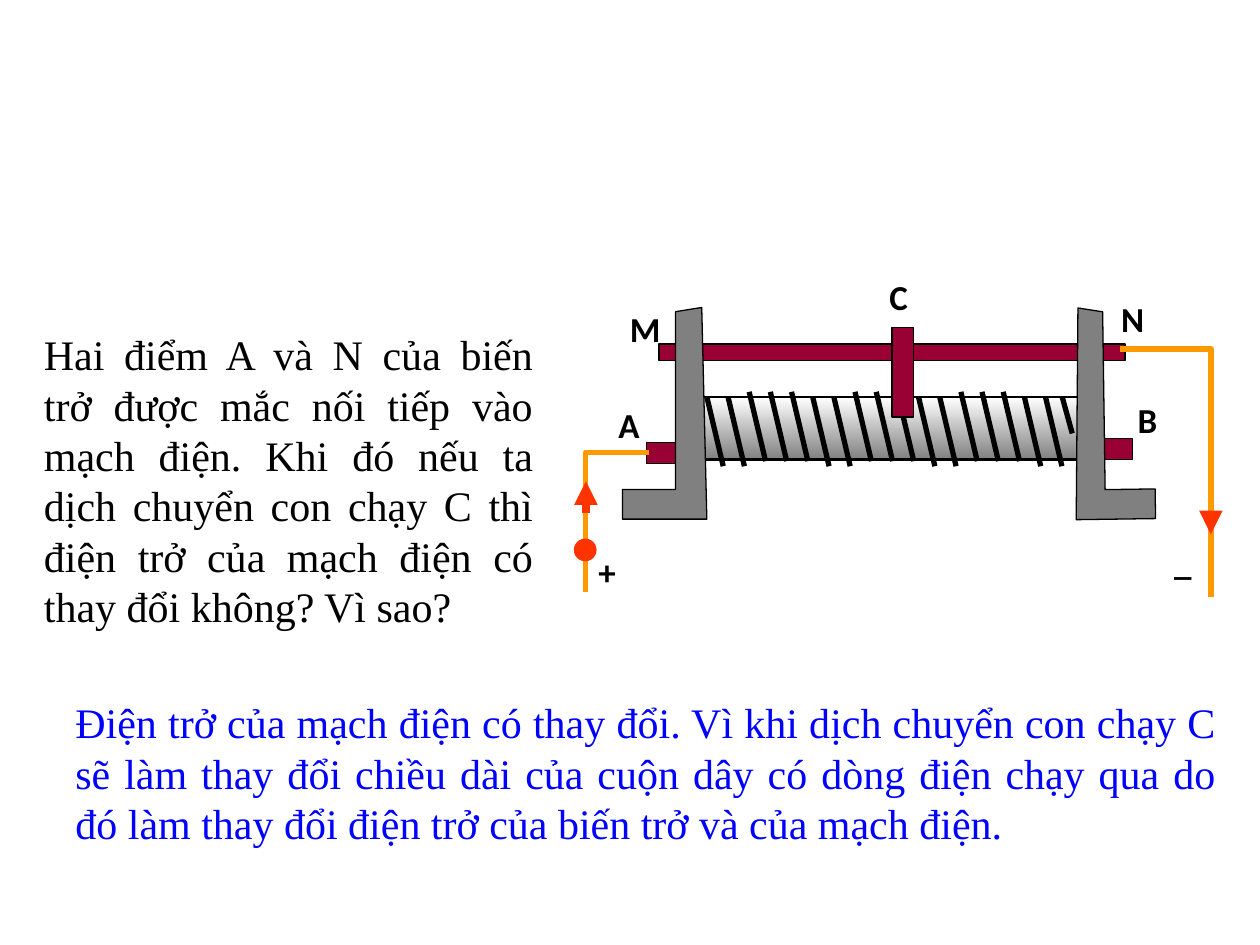
from lxml import etree
from pptx import Presentation
from pptx.dml.color import RGBColor
from pptx.enum.shapes import MSO_CONNECTOR, MSO_SHAPE
from pptx.enum.text import MSO_AUTO_SIZE, PP_ALIGN
from pptx.oxml.ns import qn
from pptx.util import Inches, Pt

RECTANGLE, OVAL = MSO_SHAPE.RECTANGLE, MSO_SHAPE.OVAL
STRAIGHT = MSO_CONNECTOR.STRAIGHT
FIT_SHAPE = MSO_AUTO_SIZE.SHAPE_TO_FIT_TEXT
JUSTIFY, LEFT = PP_ALIGN.JUSTIFY, PP_ALIGN.LEFT

BLACK = RGBColor(0x00, 0x00, 0x00)
WHITE = RGBColor(0xFF, 0xFF, 0xFF)
BLUE = RGBColor(0x00, 0x00, 0xFF)
GRAY = RGBColor(0x80, 0x80, 0x80)
CRIMSON = RGBColor(0x99, 0x00, 0x33)
ORANGE = RGBColor(0xFF, 0x99, 0x00)
RED = RGBColor(0xFF, 0x33, 0x00)

# The slide is a grid of 10 columns and 7.5 rows of square cells.
COLUMNS, ROWS = 10, 7.5
CELL = Inches(1)

QUESTION = (
    "Hai điểm A và N của biến trở được mắc nối tiếp vào mạch điện. "
    "Khi đó nếu ta dịch chuyển con chạy C thì điện trở của mạch điện "
    "có thay đổi không? Vì sao?"
)
ANSWER = (
    "Điện trở của mạch điện có thay đổi. Vì khi dịch chuyển con chạy C "
    "sẽ làm thay đổi chiều dài của cuộn dây có dòng điện chạy qua do đó "
    "làm thay đổi điện trở của biến trở và của mạch điện."
)
LABELS = [
    ("C", 6.96, 2.14, 0.46),
    ("N", 8.8, 2.31, 0.46),
    ("M", 4.9, 2.39, 0.38),
    ("A", 4.81, 3.15, 0.46),
    ("B", 8.93, 3.11, 0.46),
    ("+", 4.65, 4.32, 0.46),
    ("_", 9.22, 4.24, 0.46),
]
LABEL_HEIGHT = 0.43

# Outline of a post as shares of its width (from the outer foot) and height.
POST_OUTLINE = [(0.94, 0), (1, 1), (0, 1), (0, 0.86), (0.63, 0.86), (0.63, 0.02)]

TURNS = 17
TURN_PITCH = 0.168
TURN_LEAN, TURN_HEIGHT = 0.13, 0.55


def cells(*lengths):
    return [round(length * CELL) for length in lengths]


def set_line(shape, color, width):
    shape.line.color.rgb = color
    shape.line.width = Pt(width)


def add_text(slide, text, box, font_name, size, color=BLACK, bold=False, alignment=LEFT):
    text_box = slide.shapes.add_textbox(*cells(*box))
    text_frame = text_box.text_frame
    text_frame.word_wrap = True
    text_frame.auto_size = FIT_SHAPE
    text_frame.text = text
    paragraph = text_frame.paragraphs[0]
    paragraph.alignment = alignment
    font = paragraph.runs[0].font
    font.name, font.size, font.bold = font_name, Pt(size), bold
    font.color.rgb = color


def add_part(slide, preset, box, fill=CRIMSON, outline=BLACK, width=0.75):
    shape = slide.shapes.add_shape(preset, *cells(*box))
    shape.shadow.inherit = False
    shape.fill.solid()
    shape.fill.fore_color.rgb = fill
    set_line(shape, outline, width)
    return shape


def add_segment(slide, start, end, color=BLACK, width=3, arrow=False):
    connector = slide.shapes.add_connector(STRAIGHT, *cells(*start, *end))
    set_line(connector, color, width)
    if arrow:
        line = connector.line._get_or_add_ln()
        etree.SubElement(line, qn("a:tailEnd"), type="triangle")
    etree.SubElement(connector._element.spPr, qn("a:effectLst"))


def add_outline(slide, points, closed):
    corners = [cells(*point) for point in points]
    builder = slide.shapes.build_freeform(*corners[0])
    builder.add_line_segments(corners[1:], close=closed)
    shape = builder.convert_to_shape()
    shape.shadow.inherit = False
    return shape


def add_post(slide, foot, width, top=2.44, height=1.68, rotation=0):
    """A negative width mirrors the post, so its foot points right."""
    points = [(foot + x * width, top + y * height) for x, y in POST_OUTLINE]
    post = add_outline(slide, points, closed=True)
    post.fill.solid()
    post.fill.fore_color.rgb = GRAY
    set_line(post, BLACK, 0.75)
    post.rotation = rotation


def add_wire(slide, points):
    wire = add_outline(slide, points, closed=False)
    wire.fill.background()
    set_line(wire, ORANGE, 3)


def add_coil(slide):
    core = add_part(slide, RECTANGLE, (5.57, 3.15, 3.02, 0.5), width=1.5)
    core.fill.gradient()
    core.fill.gradient_angle = 270
    for stop, color in zip(core.fill.gradient_stops, (WHITE, GRAY)):
        stop.color.rgb = color
    for turn in range(TURNS):
        left = 5.61 + turn * TURN_PITCH
        top = 3.15 if turn % 5 < 2 else 3.11
        add_segment(slide, (left, top), (left + TURN_LEAN, top + TURN_HEIGHT))
    add_segment(slide, (8.43, 3.15), (8.51, 3.44))


def add_rheostat(slide):
    for left, top in ((5.13, 3.51), (8.74, 3.48)):
        add_part(slide, RECTANGLE, (left, top, 0.25, 0.17))
    add_coil(slide)
    add_part(slide, RECTANGLE, (5.23, 2.73, 3.7, 0.13))
    add_post(slide, 4.94, 0.67)
    add_post(slide, 9.16, -0.63, rotation=359.2)
    add_part(slide, RECTANGLE, (7.08, 2.6, 0.17, 0.71))


def add_circuit(slide):
    add_wire(slide, [(5.15, 3.59), (4.65, 3.59), (4.65, 4.7)])
    add_wire(slide, [(8.89, 2.77), (9.61, 2.77), (9.61, 4.74)])
    for x, end in ((4.65, 3.82), (9.61, 4.24)):
        add_segment(slide, (x, 4.07), (x, end), RED, 4.5, arrow=True)
    add_part(slide, OVAL, (4.56, 4.28, 0.17, 0.17), RED, RED)


def main():
    presentation = Presentation()
    presentation.slide_width, presentation.slide_height = cells(COLUMNS, ROWS)
    slide = presentation.slides.add_slide(presentation.slide_layouts[6])
    add_text(slide, QUESTION, (0.25, 2.56, 4.08, 2.52), "Times New Roman", 24,
             alignment=JUSTIFY)
    add_text(slide, ANSWER, (0.5, 5.48, 9.25, 1.31), "Times New Roman", 24, BLUE,
             alignment=JUSTIFY)
    add_rheostat(slide)
    add_circuit(slide)
    for text, left, top, width in LABELS:
        add_text(slide, text, (left, top, width, LABEL_HEIGHT), "Calibri", 20, bold=True)
    presentation.save("out.pptx")


if __name__ == "__main__":
    main()
